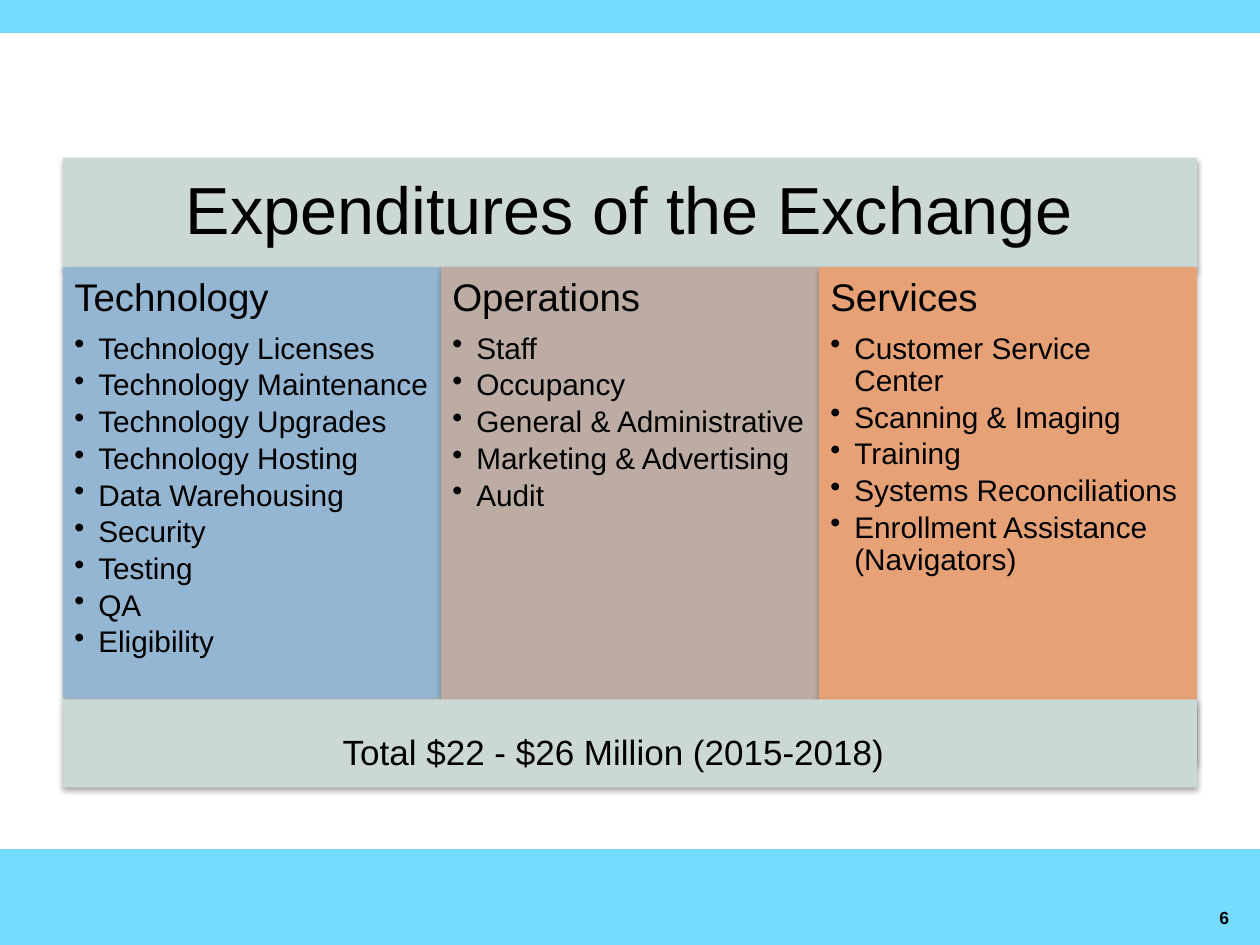
"""Build the slide on the expenditures of the exchange."""
from lxml.etree import SubElement
from pptx import Presentation
from pptx.dml.color import RGBColor
from pptx.enum.shapes import MSO_SHAPE
from pptx.enum.text import MSO_ANCHOR, MSO_AUTO_SIZE, PP_ALIGN
from pptx.oxml.ns import qn
from pptx.util import Inches, Pt

SKY = RGBColor(0x75, 0xDB, 0xFF)
SAGE = RGBColor(0xCB, 0xD8, 0xD5)
BLUE = RGBColor(0x94, 0xB6, 0xD2)
TAUPE = RGBColor(0xBD, 0xAC, 0xA4)
PEACH = RGBColor(0xE7, 0xA1, 0x76)
BLACK = RGBColor(0, 0, 0)

LEFT, TOP, WIDE = 0.5, 2.12, 3
COLUMNS = [
    ("Technology", BLUE, 3.42, [
        "Technology Licenses", "Technology Maintenance", "Technology Upgrades",
        "Technology Hosting", "Data Warehousing", "Security", "Testing", "QA",
        "Eligibility"]),
    ("Operations", TAUPE, 3.94, [
        "Staff", "Occupancy", "General & Administrative",
        "Marketing & Advertising", "Audit"]),
    ("Services", PEACH, 3.94, [
        "Customer Service Center", "Scanning & Imaging", "Training",
        "Systems Reconciliations", "Enrollment Assistance (Navigators)"]),
]


def write(frame, text, size, font="Arial", bold=False, align=PP_ALIGN.LEFT,
          line=None, after=0, bullet=False):
    first = not frame.paragraphs[0].runs
    para = frame.paragraphs[0] if first else frame.add_paragraph()
    if bullet:
        props = para._p.get_or_add_pPr()
        props.set("lvl", "1")
        props.set("marL", str(Inches(0.19)))
        props.set("indent", str(-Inches(0.19)))
        SubElement(props, qn("a:buChar"), char="•")
    para.alignment = align
    para.line_spacing = line
    para.space_after = Pt(after)
    run = para.add_run()
    run.text = text
    run.font.name = font
    run.font.size = Pt(size)
    run.font.bold = bold
    run.font.color.rgb = BLACK


class Deck:
    def __init__(self):
        self.show = Presentation()
        self.show.slide_width = Inches(10)
        self.show.slide_height = Inches(7.5)
        self.slide = self.show.slides.add_slide(self.show.slide_layouts[6])

    def rect(self, box, fill):
        shape = self.slide.shapes.add_shape(MSO_SHAPE.RECTANGLE, *map(Inches, box))
        shape.fill.solid()
        shape.fill.fore_color.rgb = fill
        shape.shadow.inherit = False
        return shape

    def band(self, box):
        shape = self.rect(box, SKY)
        shape.line.color.rgb = SKY
        shape.line.width = Pt(2)

    def panel(self, box, fill, inset=0.09, anchor=MSO_ANCHOR.TOP):
        shape = self.rect(box, fill)
        shape.line.fill.background()
        effects = shape.element.spPr.find(qn("a:effectLst"))
        shadow = SubElement(effects, qn("a:outerShdw"), blurRad=str(Pt(3.1)),
                            dist=str(Pt(1.8)), dir="5400000", rotWithShape="0")
        color = SubElement(shadow, qn("a:srgbClr"), val=str(BLACK))
        SubElement(color, qn("a:alpha"), val="35000")
        frame = shape.text_frame
        frame.word_wrap = True
        frame.vertical_anchor = anchor
        frame.margin_left = frame.margin_right = Inches(inset)
        frame.margin_top = frame.margin_bottom = Inches(inset)
        return frame

    def label(self, box, text, wrap=True, **style):
        frame = self.slide.shapes.add_textbox(*map(Inches, box)).text_frame
        frame.word_wrap = wrap
        frame.auto_size = MSO_AUTO_SIZE.SHAPE_TO_FIT_TEXT
        write(frame, text, **style)

    def column(self, left, title, fill, high, items):
        frame = self.panel((left, TOP, WIDE, high), fill)
        write(frame, title, size=22, line=0.9, after=7.7)
        for item in items:
            write(frame, item, size=17, line=0.9, after=2.6, bullet=True)


def main():
    deck = Deck()
    deck.band((0, 6.75, 10, 0.75))
    deck.band((0, 0, 10, 0.25))
    deck.label((9.58, 7.15, 0.37, 0.27), "6", wrap=False, size=10, bold=True)
    head = deck.panel((LEFT, 1.25, 3 * WIDE, 0.88), SAGE, 0.16, MSO_ANCHOR.MIDDLE)
    write(head, "Expenditures of the Exchange", size=38, line=0.9,
          align=PP_ALIGN.CENTER)
    for index, column in enumerate(COLUMNS):
        deck.column(LEFT + index * WIDE, *column)
    deck.panel((LEFT, 5.55, 3 * WIDE, 0.7), SAGE)
    deck.label((2.58, 5.75, 4.58, 0.44), "Total $22 - $26 Million (2015-2018)",
               size=20, align=PP_ALIGN.CENTER)
    deck.show.save("out.pptx")


if __name__ == "__main__":
    main()
